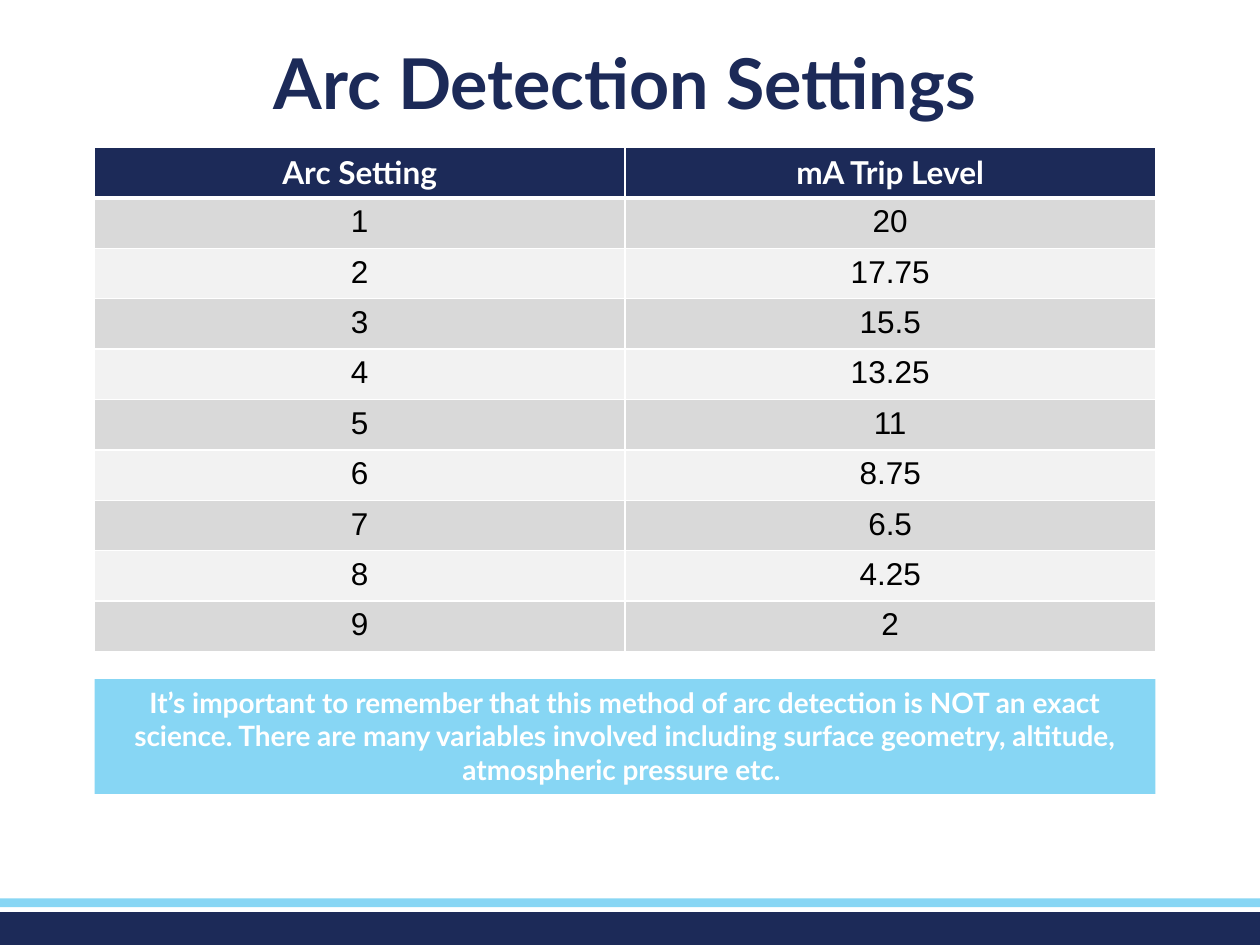
from lxml import etree
from pptx import Presentation
from pptx.dml.color import RGBColor
from pptx.enum.shapes import MSO_SHAPE
from pptx.enum.text import MSO_ANCHOR, PP_ALIGN
from pptx.oxml.ns import qn
from pptx.util import Inches, Pt

RECTANGLE = MSO_SHAPE.RECTANGLE
CENTER = PP_ALIGN.CENTER
TOP = MSO_ANCHOR.TOP
MIDDLE = MSO_ANCHOR.MIDDLE

COLORS = {
    "navy": "1C2A58",
    "sky": "88D6F4",
    "note": "87D6F4",
    "white": "FFFFFF",
    "black": "000000",
    "dark_band": "D9D9D9",
    "light_band": "F2F2F2",
}


def write_text(frame, text, size=18, font="Lato", color="white", bold=True, spacing=None):
    frame.word_wrap = True
    para = frame.paragraphs[0]
    para.alignment = CENTER
    para.line_spacing = spacing
    span = para.add_run()
    span.text = text
    span.font.size = Pt(size)
    span.font.name = font
    span.font.bold = bold
    span.font.color.rgb = RGBColor.from_string(COLORS[color])


def set_borders(cell, bottom=1, top=1):
    properties = cell._tc.get_or_add_tcPr()
    widths = {"a:lnL": 1, "a:lnR": 1, "a:lnT": top, "a:lnB": bottom}
    for position, (tag, width) in enumerate(widths.items()):
        line = etree.Element(qn(tag), w=str(Pt(width)))
        fill = etree.SubElement(line, qn("a:solidFill"))
        etree.SubElement(fill, qn("a:srgbClr"), val=COLORS["white"])
        properties.insert(position, line)


deck = Presentation()
deck.slide_width = Inches(10)
deck.slide_height = Inches(7.5)
page = deck.slides.add_slide(deck.slide_layouts[6])

bars = {}
for role, left, top, width, height, color in [
    ("footer", 0, 7.24, 10, 0.26, "navy"),
    ("stripe", 0, 7.13, 10, 0.07, "sky"),
    ("note", 0.75, 5.39, 8.42, 0.91, "note"),
]:
    bar = page.shapes.add_shape(
        RECTANGLE, Inches(left), Inches(top), Inches(width), Inches(height)
    )
    bar.shadow.inherit = False
    bar.fill.solid()
    bar.fill.fore_color.rgb = RGBColor.from_string(COLORS[color])
    bar.line.fill.background()
    bars[role] = bar

note_frame = bars["note"].text_frame
note_frame.vertical_anchor = TOP
write_text(
    note_frame,
    "It’s important to remember that this method of arc detection is NOT an exact "
    "science. There are many variables involved including surface geometry, altitude, "
    "atmospheric pressure etc. ",
    size=16,
)

rows = [("Arc Setting", "mA Trip Level")]
rows += [(str(setting), f"{20 - 2.25 * (setting - 1):g}") for setting in range(1, 10)]
table = page.shapes.add_table(
    len(rows), 2, Inches(0.75), Inches(1.17), Inches(8.42), Inches(4)
).table

for row_index, values in enumerate(rows):
    header = row_index == 0
    band = "navy" if header else "dark_band" if row_index % 2 else "light_band"
    for column_index, value in enumerate(values):
        cell = table.cell(row_index, column_index)
        cell.fill.solid()
        cell.fill.fore_color.rgb = RGBColor.from_string(COLORS[band])
        set_borders(cell, bottom=3 if header else 1, top=3 if row_index == 1 else 1)
        write_text(
            cell.text_frame,
            value,
            font="Lato" if header else "Arial",
            color="white" if header else "black",
            bold=header,
        )

title = page.shapes.add_textbox(Inches(0.46), Inches(0.36), Inches(9), Inches(0.66))
title.text_frame.vertical_anchor = MIDDLE
write_text(title.text_frame, "Arc Detection Settings", size=40, color="navy", spacing=0.9)

deck.save("out.pptx")
